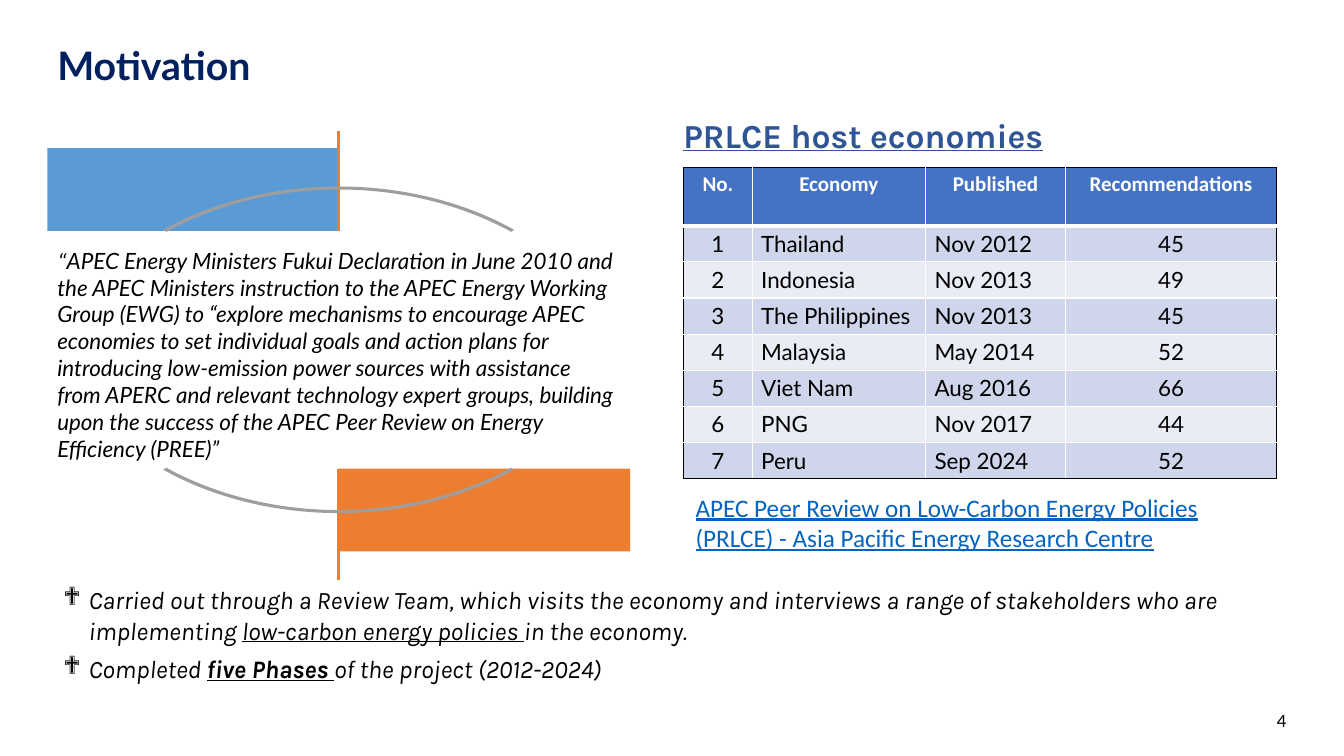
import pptx
import pptx.dml.color
import pptx.enum.shapes
import pptx.enum.text
import pptx.oxml
import pptx.oxml.ns
import pptx.util

WIDTH, HEIGHT = 13.33, 7.5
BLACK, WHITE, NAVY, BLUE = "000000", "FFFFFF", "002060", "2F5597"
ORANGE, SKY, GREY, LINK = "ED7D31", "5B9BD5", "9E9E9E", "0563C1"
HEADER_FILL, BAND_FILLS = "4472C4", ("CFD5EA", "E9EBF5")

QUOTE = (
    "APEC Energy Ministers Fukui Declaration in June 2010 and the APEC Ministers instruction "
    "to the APEC Energy Working Group (EWG) to “explore mechanisms to encourage APEC economies "
    "to set individual goals and action plans for introducing low-emission power sources with "
    "assistance from APERC and relevant technology expert groups, building upon the success of "
    "the APEC Peer Review on Energy Efficiency (PREE)”"
)
LINK_TEXT = ("APEC Peer Review on Low-Carbon Energy Policies (PRLCE) - "
             "Asia Pacific Energy Research Centre")
BULLETS = [
    [("Carried out through a Review Team, which visits the economy and interviews a range of "
      "stakeholders who are implementing ", {}),
     ("low-carbon energy policies ", {"underline": True}), ("in the economy.", {})],
    [("Completed ", {}), ("five Phases ", {"bold": True, "underline": True}),
     ("of the project (2012-2024)", {})],
]
HEADERS = ("No.", "Economy", "Published", "Recommendations")
ECONOMIES = [
    ("Thailand", "Nov 2012", 45),
    ("Indonesia", "Nov 2013", 49),
    ("The Philippines", "Nov 2013", 45),
    ("Malaysia", "May 2014", 52),
    ("Viet Nam", "Aug 2016", 66),
    ("PNG", "Nov 2017", 44),
    ("Peru", "Sep 2024", 52),
]
COLUMN_WIDTHS = (0.68, 1.72, 1.39, 2.09)
HEADER_HEIGHT, ROW_HEIGHT = 0.58, 0.34

# Quote frame: everything mirrors about the horizontal line AXIS_Y
LEFT, CENTER_X, AXIS_Y = 0.47, 3.36, 3.47
BAR_WIDTH, BAR_HEIGHT, BAR_TOP = CENTER_X - LEFT, 0.82, 1.47
ARC_LEFT, ARC_WIDTH, ARC_HEIGHT = 0.53, 5.67, 4.02
# Arc curve points as (distance from CENTER_X, distance from AXIS_Y), end to middle
INNER_CURVE = [(1.71, 1.17), (1.22, 1.44), (0.62, 1.59), (0, 1.59)]
OUTER_CURVE = [(1.74, 1.19), (1.24, 1.47), (0.63, 1.62), (0, 1.62)]

LEFT_ALIGN, CENTER, RIGHT = (pptx.enum.text.PP_ALIGN.LEFT, pptx.enum.text.PP_ALIGN.CENTER,
                             pptx.enum.text.PP_ALIGN.RIGHT)
TOP, MIDDLE, BOTTOM = (pptx.enum.text.MSO_ANCHOR.TOP, pptx.enum.text.MSO_ANCHOR.MIDDLE,
                       pptx.enum.text.MSO_ANCHOR.BOTTOM)
NAMESPACE = pptx.oxml.ns.nsdecls("a")
inches = pptx.util.Inches


def color(hex_string):
    return pptx.dml.color.RGBColor.from_string(hex_string)


def fill_shape(shape, fill):
    shape.shadow.inherit = False
    shape.fill.solid()
    shape.fill.fore_color.rgb = color(fill)
    shape.line.fill.background()


def add_run(paragraph, text, font, size, ink=BLACK, bold=False, italic=False, underline=False):
    run = paragraph.add_run()
    run.text = text
    run.font.name, run.font.size = font, pptx.util.Pt(size)
    run.font.bold, run.font.italic, run.font.underline = bold, italic, underline
    run.font.color.rgb = color(ink)


def add_text_frame(slide, box, anchor=TOP):
    text_frame = slide.shapes.add_textbox(*map(inches, box)).text_frame
    text_frame.word_wrap = True
    text_frame.vertical_anchor = anchor
    return text_frame


def add_label(slide, box, text, font, size, ink, anchor=TOP, align=LEFT_ALIGN, spacing=1.0,
              **style):
    paragraph = add_text_frame(slide, box, anchor).paragraphs[0]
    paragraph.alignment, paragraph.line_spacing = align, spacing
    add_run(paragraph, text, font, size, ink, **style)


def add_bullets(slide, box):
    text_frame = add_text_frame(slide, box)
    for index, runs in enumerate(BULLETS):
        paragraph = text_frame.add_paragraph() if index else text_frame.paragraphs[0]
        paragraph.space_after = pptx.util.Pt(6)
        properties = paragraph._p.get_or_add_pPr()
        properties.set("marL", str(inches(0.25)))
        properties.set("indent", str(inches(-0.25)))
        for bullet in ('buFont typeface="Wingdings"', 'buChar char="❖"'):
            properties.append(pptx.oxml.parse_xml(f"<a:{bullet} {NAMESPACE}/>"))
        for text, style in runs:
            add_run(paragraph, text, "Karla", 18, italic=True, **style)


def add_arc(slide, side):
    """Draw a thin curved band above (side -1) or below (side 1) the axis."""
    arc_edge = AXIS_Y + side * OUTER_CURVE[-1][1]
    top = arc_edge - ARC_HEIGHT if side > 0 else arc_edge
    right, bottom = ARC_LEFT + ARC_WIDTH, top + ARC_HEIGHT
    corners = [(x * 1000, y * 1000) for x, y in
               ((ARC_LEFT, top), (right, top), (right, bottom), (ARC_LEFT, bottom))]
    builder = slide.shapes.build_freeform(*corners[0], scale=inches(1) / 1000)
    builder.add_line_segments(corners[1:], close=True)
    arc = builder.convert_to_shape()
    fill_shape(arc, GREY)

    def points(offsets):
        return "".join(
            f'<a:pt x="{round((CENTER_X + across - ARC_LEFT) * 1000)}" '
            f'y="{round((AXIS_Y + side * down - top) * 1000)}"/>' for across, down in offsets)

    def sweep(curve):
        """Offsets of a whole curve, from the left end to the right end."""
        return [(-across, down) for across, down in curve] + curve[-2::-1]

    inner, outer = sweep(INNER_CURVE), sweep(OUTER_CURVE)[::-1]
    steps = [("moveTo", inner[:1]), ("cubicBezTo", inner[1:4]), ("cubicBezTo", inner[4:]),
             ("lnTo", outer[:1]), ("cubicBezTo", outer[1:4]), ("cubicBezTo", outer[4:]),
             ("close", [])]
    outline = next(arc._element.iter(pptx.oxml.ns.qn("a:pathLst")))[0]
    for child in list(outline):
        outline.remove(child)
    for tag, offsets in steps:
        outline.append(pptx.oxml.parse_xml(f"<a:{tag} {NAMESPACE}>{points(offsets)}</a:{tag}>"))


def add_quote_frame(slide):
    bar_bottom = BAR_TOP + BAR_HEIGHT
    lower_top = 2 * AXIS_Y - bar_bottom
    for left, top, fill in ((CENTER_X, lower_top, ORANGE), (LEFT, BAR_TOP, SKY)):
        bar = slide.shapes.add_shape(
            pptx.enum.shapes.MSO_SHAPE.RECTANGLE,
            *map(inches, (left, top, BAR_WIDTH, BAR_HEIGHT)))
        fill_shape(bar, fill)
    for start, end in ((1.3, bar_bottom), (lower_top, 5.75)):
        line = slide.shapes.add_connector(
            pptx.enum.shapes.MSO_CONNECTOR.STRAIGHT,
            *map(inches, (CENTER_X, start, CENTER_X, end)))
        line.line.color.rgb = color(ORANGE)
        line.line.width = pptx.util.Pt(2)
        line._element.spPr.append(pptx.oxml.parse_xml(f"<a:effectLst {NAMESPACE}/>"))
    for side in (1, -1):
        add_arc(slide, side)


def set_border(cell, edge, ink, width):
    cell._tc.get_or_add_tcPr().append(pptx.oxml.parse_xml(
        f'<a:{edge} {NAMESPACE} w="{pptx.util.Pt(width)}">'
        f'<a:solidFill><a:srgbClr val="{ink}"/></a:solidFill></a:{edge}>'))


def add_economy_table(slide, left, top):
    rows = [HEADERS] + [(number, *economy) for number, economy in enumerate(ECONOMIES, 1)]
    last_row, last_column = len(rows) - 1, len(HEADERS) - 1
    table = slide.shapes.add_table(
        len(rows), len(HEADERS), inches(left), inches(top), inches(sum(COLUMN_WIDTHS)),
        inches(HEADER_HEIGHT + ROW_HEIGHT * last_row)).table
    for column, width in zip(table.columns, COLUMN_WIDTHS):
        column.width = inches(width)
    for row_index, values in enumerate(rows):
        header = row_index == 0
        table.rows[row_index].height = inches(HEADER_HEIGHT if header else ROW_HEIGHT)
        for column_index, value in enumerate(values):
            cell = table.cell(row_index, column_index)
            cell.margin_left = cell.margin_right = inches(0.09)
            cell.margin_top = cell.margin_bottom = pptx.util.Pt(3.3)
            outer_edges = {"lnL": column_index == 0, "lnR": column_index == last_column,
                           "lnT": header, "lnB": row_index == last_row}
            for edge, outer in outer_edges.items():
                thick = (header and edge == "lnB") or (row_index == 1 and edge == "lnT")
                set_border(cell, edge, BLACK if outer else WHITE, 3 if thick else 1)
            cell.fill.solid()
            cell.fill.fore_color.rgb = color(
                HEADER_FILL if header else BAND_FILLS[(row_index - 1) % 2])
            paragraph = cell.text_frame.paragraphs[0]
            centered = header or column_index in (0, last_column)
            paragraph.alignment = CENTER if centered else LEFT_ALIGN
            style = ("Calibri", 15, WHITE, True) if header else ("Lato", 16)
            add_run(paragraph, str(value), *style)


def main():
    presentation = pptx.Presentation()
    presentation.slide_width, presentation.slide_height = inches(WIDTH), inches(HEIGHT)
    slide = presentation.slides.add_slide(presentation.slide_layouts[6])
    add_bullets(slide, (0.53, 5.75, 12.39, 1.12))
    add_label(slide, (LEFT, 0.34, 11.34, 0.59), "Motivation", "Lato", 28, NAVY, BOTTOM,
              spacing=0.9, bold=True)
    add_label(slide, (9.86, 6.95, 3, 0.4), "4", "Lato", 12, BLACK, MIDDLE, RIGHT)
    add_quote_frame(slide)
    quote = add_text_frame(slide, (LEFT, 2.4, 5.72, 2.26)).paragraphs[0]
    add_run(quote, "“", "Calibri", 16, italic=True)
    add_run(quote, QUOTE, "Lato", 16, italic=True)
    add_label(slide, (6.68, 1, 4.12, 0.59), "PRLCE host economies", "Karla", 24, BLUE, BOTTOM,
              spacing=0.9, bold=True, underline=True)
    add_economy_table(slide, 6.78, 1.66)
    add_label(slide, (6.8, 4.83, 5.68, 0.71), LINK_TEXT, "Calibri", 18, LINK, underline=True)
    presentation.save("out.pptx")


if __name__ == "__main__":
    main()
